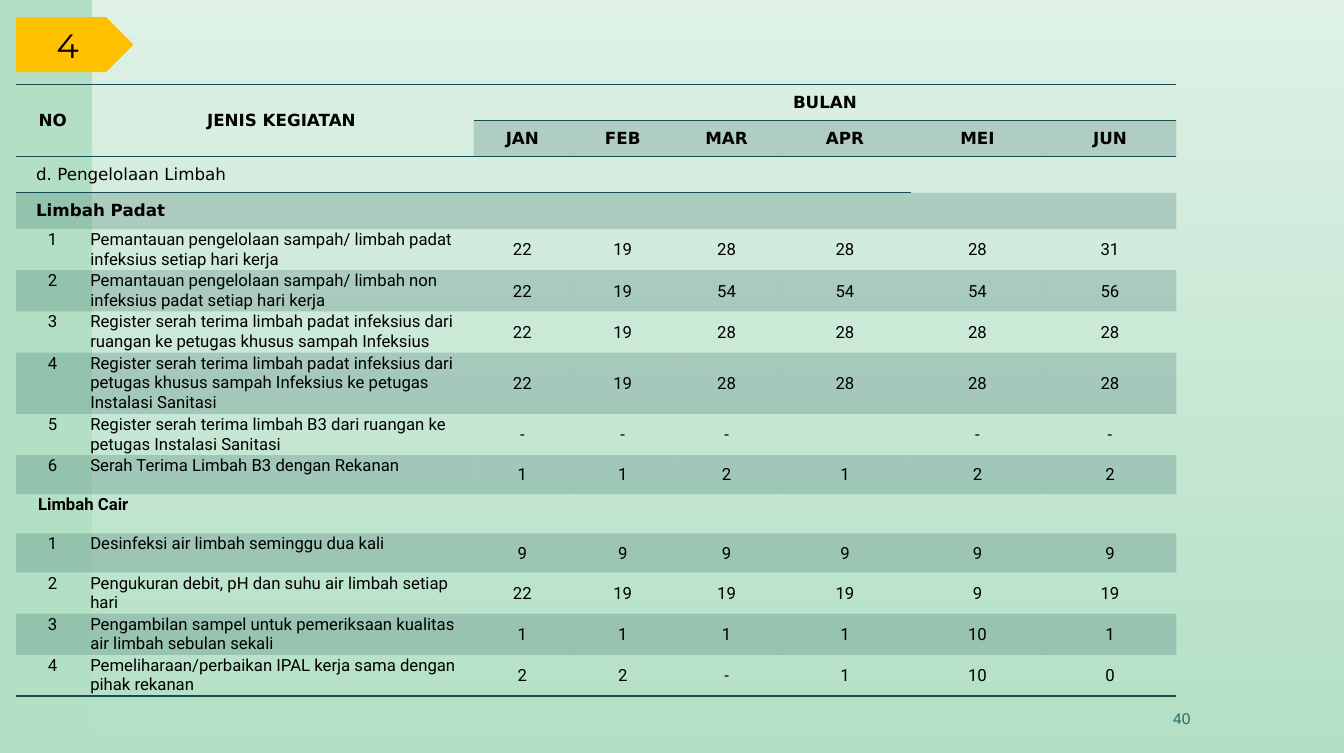
from dataclasses import dataclass
from lxml.etree import SubElement
from pptx import Presentation
from pptx.dml.color import RGBColor
from pptx.enum.shapes import MSO_SHAPE
from pptx.enum.text import MSO_ANCHOR, PP_ALIGN
from pptx.oxml import parse_xml
from pptx.oxml.ns import nsdecls, qn
from pptx.util import Inches, Pt

COLORS = {"mint": "B3E0C5", "white": "FFFFFF", "amber": "FFC000",
          "black": "000000", "teal": "164B4F", "number": "1F696F"}
SLIDE_WIDTH, SLIDE_HEIGHT = Inches(13.39), Inches(7.5)
NO_STYLE = "{2D5ABB26-0587-4C30-8999-92F81FD0307C}"
COLUMN_WEIGHTS = [73, 383, 97, 103, 104, 132, 132, 132]
ROW_WEIGHTS = [35, 35, 34, 34, 40, 40, 40, 59, 40, 39, 39, 39, 40, 40, 40]
MONTHS = ["JAN", "FEB", "MAR", "APR", "MEI", "JUN"]


@dataclass(frozen=True)
class Area:
    """A rectangle in percent of the slide's size."""
    left: float
    top: float
    width: float
    height: float

    def lengths(self) -> list[int]:
        return [round(share * size / 100) for share, size in (
            (self.left, SLIDE_WIDTH), (self.top, SLIDE_HEIGHT),
            (self.width, SLIDE_WIDTH), (self.height, SLIDE_HEIGHT))]


@dataclass(frozen=True)
class TextStyle:
    font: str
    size: float = 12
    bold: bool = False
    align: PP_ALIGN = PP_ALIGN.CENTER
    anchor: MSO_ANCHOR = MSO_ANCHOR.MIDDLE
    color: str = "black"


@dataclass(frozen=True)
class Activity:
    number: str
    name: str
    counts: list[str]


HEADER = TextStyle("DejaVu Sans", bold=True)
SECTION = TextStyle("DejaVu Sans", align=PP_ALIGN.LEFT)
SUBSECTION = TextStyle("DejaVu Sans", bold=True, align=PP_ALIGN.LEFT)
LIQUID = TextStyle("Roboto", bold=True, align=PP_ALIGN.LEFT, anchor=MSO_ANCHOR.TOP)
NUMBER = TextStyle("Roboto", anchor=MSO_ANCHOR.TOP)
NAME = TextStyle("Roboto", align=PP_ALIGN.LEFT, anchor=MSO_ANCHOR.TOP)
COUNT = TextStyle("Roboto")
WIDE_MARGINS = (0.2, 0.08, 0.2, 0.08)
THIN_MARGINS = (0.01, 0.01, 0.01, 0)
LIQUID_MARGINS = (0.22, 0.01, 0.01, 0)

SOLID_WASTE = [
    Activity("1", "Pemantauan pengelolaan sampah/ limbah padat infeksius setiap hari kerja",
             ["22", "19", "28", "28", "28", "31"]),
    Activity("2", "Pemantauan pengelolaan sampah/ limbah non infeksius padat setiap hari kerja",
             ["22", "19", "54", "54", "54", "56"]),
    Activity("3", "Register serah terima limbah padat infeksius dari ruangan ke petugas "
             "khusus sampah Infeksius", ["22", "19", "28", "28", "28", "28"]),
    Activity("4", "Register serah terima limbah padat infeksius dari petugas khusus sampah "
             "Infeksius ke petugas Instalasi Sanitasi", ["22", "19", "28", "28", "28", "28"]),
    Activity("5", "Register serah terima limbah B3 dari ruangan ke petugas Instalasi Sanitasi",
             ["-", "-", "-", "", "-", "-"]),
    Activity("6", "Serah Terima Limbah B3 dengan Rekanan", ["1", "1", "2", "1", "2", "2"]),
]
LIQUID_WASTE = [
    Activity("1", "Desinfeksi air limbah seminggu dua kali", ["9"] * 6),
    Activity("2", "Pengukuran debit, pH dan suhu air limbah setiap hari",
             ["22", "19", "19", "19", "9", "19"]),
    Activity("3", "Pengambilan sampel untuk pemeriksaan kualitas air limbah sebulan sekali",
             ["1", "1", "1", "1", "10", "1"]),
    Activity("4", "Pemeliharaan/perbaikan IPAL kerja sama dengan pihak rekanan",
             ["2", "2", "-", "1", "10", "0"]),
]


def rgb(name: str) -> RGBColor:
    return RGBColor.from_string(COLORS[name])


def set_alpha(element, percents: list[int]) -> None:
    """Give each colour within the element its opacity, in order."""
    for color, percent in zip(element.iter(qn("a:srgbClr")), percents):
        SubElement(color, qn("a:alpha")).set("val", str(percent * 1000))


def write(text_frame, text: str, style: TextStyle) -> None:
    paragraph = text_frame.paragraphs[0]
    paragraph.alignment = style.align
    run = paragraph.add_run()
    run.text = text
    for attribute, value in {"name": style.font, "size": Pt(style.size),
                             "bold": style.bold}.items():
        setattr(run.font, attribute, value)
    run.font.color.rgb = rgb(style.color)


def set_margins(cell, margins: tuple[float, ...]) -> None:
    for side, margin in zip(("left", "top", "right", "bottom"), margins):
        setattr(cell, f"margin_{side}", Inches(margin))


def fill_cell(cell, text: str, style: TextStyle, margins: tuple[float, ...]) -> None:
    set_margins(cell, margins)
    cell.vertical_anchor = style.anchor
    write(cell.text_frame, text, style)


def add_border(cell, edge: str) -> None:
    """Rule the top (T) or bottom (B) edge; add B before T."""
    cell._tc.get_or_add_tcPr().insert(0, parse_xml(
        f'<a:ln{edge} {nsdecls("a")} w="12700"><a:solidFill>'
        f'<a:srgbClr val="{COLORS["teal"]}"/></a:solidFill></a:ln{edge}>'))


def add_shape(slide, preset: MSO_SHAPE, area: Area):
    shape = slide.shapes.add_shape(preset, *area.lengths())
    shape.shadow.inherit = False
    shape.line.fill.background()
    return shape


def add_background(slide) -> None:
    slide.background.fill.solid()
    slide.background.fill.fore_color.rgb = rgb("mint")
    veil = add_shape(slide, MSO_SHAPE.RECTANGLE, Area(6.87, 0, 93.13, 100))
    veil.fill.gradient()
    veil.fill.gradient_angle = 270
    for stop, position in zip(veil.fill.gradient_stops, (0, 1)):
        stop.color.rgb = rgb("white")
        stop.position = position
    set_alpha(veil.fill._xPr, [60, 0])


def add_badge(slide) -> None:
    badge = add_shape(slide, MSO_SHAPE.PENTAGON, Area(1.19, 2.27, 8.74, 7.33))
    badge.fill.solid()
    badge.fill.fore_color.rgb = rgb("amber")
    badge.text_frame.vertical_anchor = MSO_ANCHOR.MIDDLE
    write(badge.text_frame, "4", TextStyle("Montserrat", 24.1))


def add_page_number(slide) -> None:
    frame = slide.shapes.add_textbox(*Area(66.02, 92.67, 23.3, 5.33).lengths()).text_frame
    frame.word_wrap = True
    frame.vertical_anchor = MSO_ANCHOR.MIDDLE
    write(frame, "40", TextStyle("Arial", 11.1, align=PP_ALIGN.RIGHT, color="number"))


def add_activities(table, first_row: int, activities: list[Activity]) -> None:
    for row, activity in enumerate(activities, first_row):
        fill_cell(table.cell(row, 0), activity.number, NUMBER, THIN_MARGINS)
        fill_cell(table.cell(row, 1), activity.name, NAME, THIN_MARGINS)
        for column, count in enumerate(activity.counts, 2):
            if count:
                fill_cell(table.cell(row, column), count, COUNT, THIN_MARGINS)


def add_schedule(slide) -> None:
    area = Area(1.19, 11.2, 86.34, 79.2).lengths()
    frame = slide.shapes.add_table(len(ROW_WEIGHTS), len(COLUMN_WEIGHTS), *area)
    table = frame.table
    table.first_row = table.horz_banding = False
    table._tbl.tblPr.find(qn("a:tableStyleId")).text = NO_STYLE
    for column, weight in zip(table.columns, COLUMN_WEIGHTS):
        column.width = round(area[2] * weight / sum(COLUMN_WEIGHTS))
    for row, weight in zip(table.rows, ROW_WEIGHTS):
        row.height = round(area[3] * weight / sum(ROW_WEIGHTS))

    for row in range(len(ROW_WEIGHTS)):
        for column in range(len(COLUMN_WEIGHTS)):
            cell = table.cell(row, column)
            set_margins(cell, THIN_MARGINS)
            if row % 2 and (row > 1 or column > 1):
                cell.fill.solid()
                cell.fill.fore_color.rgb = rgb("teal")
                set_alpha(cell._tc.tcPr, [20])
            else:
                cell.fill.background()
            if row == len(ROW_WEIGHTS) - 1 or (row == 0 and column > 1):
                add_border(cell, "B")
            if row == 0 or (row == 1 and column > 1) or (row == 2 and column < 6):
                add_border(cell, "T")

    for start, end in (((0, 0), (1, 0)), ((0, 1), (1, 1)), ((0, 2), (0, 7)),
                       ((2, 0), (2, 5)), ((3, 0), (3, 5)), ((10, 0), (10, 1))):
        table.cell(*start).merge(table.cell(*end))
    for column, heading in enumerate(["NO", "JENIS KEGIATAN", "BULAN"]):
        fill_cell(table.cell(0, column), heading, HEADER, WIDE_MARGINS)
    for column, month in enumerate(MONTHS, 2):
        fill_cell(table.cell(1, column), month, HEADER, WIDE_MARGINS)
    fill_cell(table.cell(2, 0), "d. Pengelolaan Limbah", SECTION, WIDE_MARGINS)
    fill_cell(table.cell(3, 0), "Limbah Padat", SUBSECTION, WIDE_MARGINS)
    add_activities(table, 4, SOLID_WASTE)
    fill_cell(table.cell(10, 0), "Limbah Cair", LIQUID, LIQUID_MARGINS)
    add_activities(table, 11, LIQUID_WASTE)


def main() -> None:
    presentation = Presentation()
    presentation.slide_width, presentation.slide_height = SLIDE_WIDTH, SLIDE_HEIGHT
    slide = presentation.slides.add_slide(presentation.slide_layouts[6])
    for add_part in (add_background, add_page_number, add_badge, add_schedule):
        add_part(slide)
    presentation.save("out.pptx")


if __name__ == "__main__":
    main()
